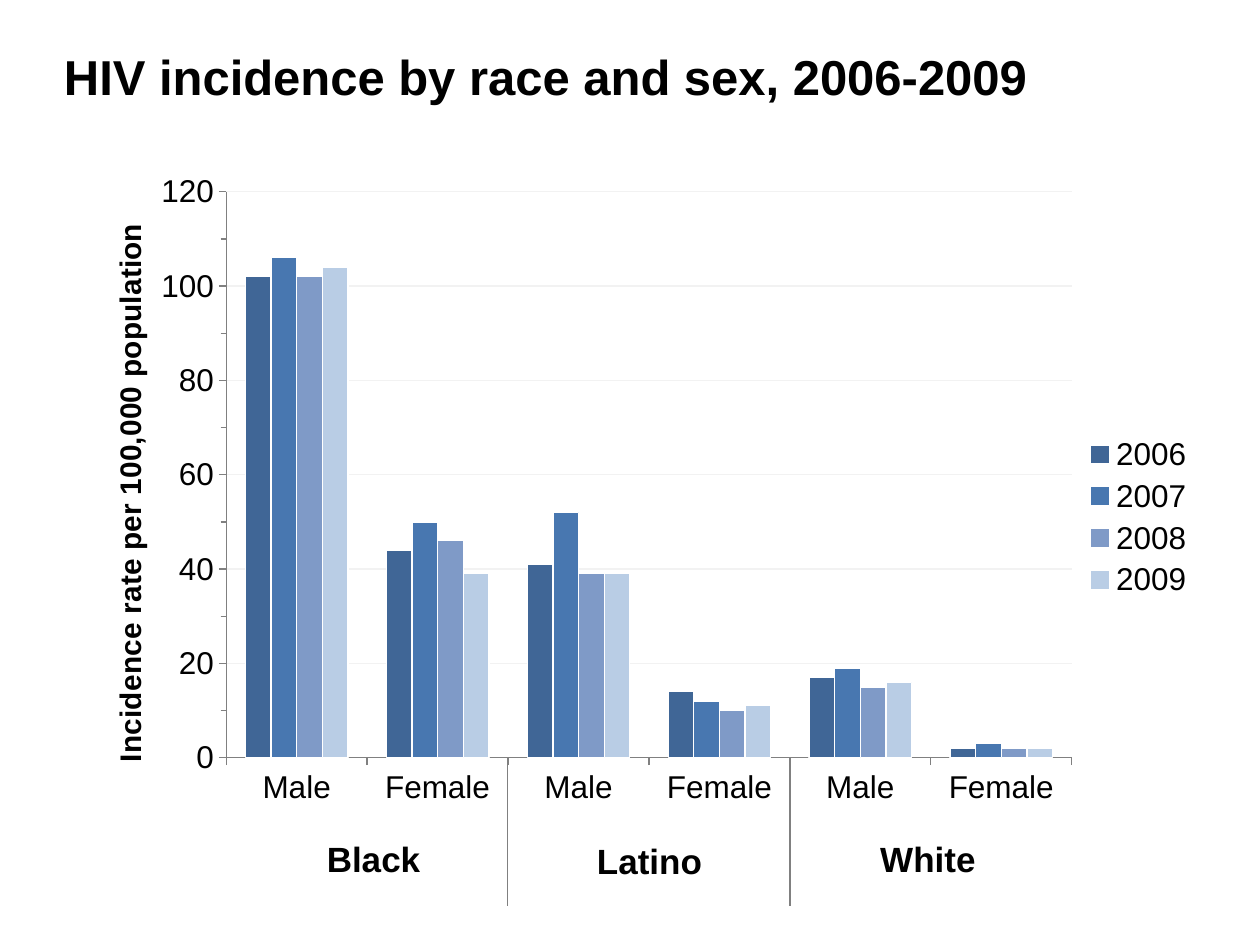
"""Build a slide with a clustered column chart of HIV incidence by race and sex."""
from lxml import etree
from pptx import Presentation
from pptx import util as u
from pptx.chart.data import CategoryChartData
from pptx.dml.color import RGBColor
from pptx.enum import chart as ch, shapes, text
from pptx.oxml.ns import qn

COLORS = {"text": "000000", "axis": "808080", "grid": "F2F2F2", "edge": "FFFFFF"}
FONT = "Arial"
TITLE = "HIV incidence by race and sex, 2006-2009"
AXIS_TITLE = "Incidence rate per 100,000 population"
SEXES = ["Male", "Female"]
RACES = [("Black", 2.05, 6.6), ("Latino", 4.24, 6.61), ("White", 6.45, 6.6)]
DIVIDERS = [4.03, 6.27]
SERIES = [
    ("2006", (102, 44, 41, 14, 17, 2), "406696"),
    ("2007", (106, 50, 52, 12, 19, 3), "4877B0"),
    ("2008", (102, 46, 39, 10, 15, 2), "7F9AC7"),
    ("2009", (104, 39, 39, 11, 16, 2), "B9CDE5"),
]


def rgb(name):
    return RGBColor.from_string(COLORS.get(name, name))


def style(font, size, bold=False):
    values = {"name": FONT, "size": u.Pt(size), "bold": bold}
    for key, value in values.items():
        setattr(font, key, value)
    font.color.rgb = rgb("text")


def set_line(line, color, width=0.75):
    line.color.rgb = rgb(color)
    line.width = u.Pt(width)


def add_text(s, content, box, size, align):
    tf = s.shapes.add_textbox(*map(u.Inches, box)).text_frame
    tf.word_wrap = True
    p = tf.paragraphs[0]
    p.alignment = align
    r = p.add_run()
    r.text = content
    style(r.font, size, True)


def set_layout(parent, index, values):
    for old in parent.findall(qn("c:layout")):
        parent.remove(old)
    layout = etree.Element(qn("c:layout"))
    manual = etree.SubElement(layout, qn("c:manualLayout"))
    for key, value in values.items():
        etree.SubElement(manual, qn(f"c:{key}")).set("val", str(value))
    parent.insert(index, layout)


def add_chart(s):
    data = CategoryChartData()
    data.categories = SEXES * len(RACES)
    for name, values, _ in SERIES:
        data.add_series(name, values)
    box = map(u.Inches, (0.56, 1.28, 9.02, 5.65))
    chart = s.shapes.add_chart(ch.XL_CHART_TYPE.COLUMN_CLUSTERED, *box, data).chart
    style(chart.font, 18)
    chart.has_title = False
    chart.has_legend = True
    chart.legend.position = ch.XL_LEGEND_POSITION.RIGHT
    chart.legend.include_in_layout = False
    style(chart.legend.font, 18)

    plot = chart.plots[0]
    plot.gap_width, plot.overlap, plot.vary_by_categories = 150, 0, False
    for ser, (_, _, color) in zip(plot.series, SERIES):
        ser.format.fill.solid()
        ser.format.fill.fore_color.rgb = rgb(color)
        set_line(ser.format.line, "edge")

    cat, val = chart.category_axis, chart.value_axis
    for axis in (cat, val):
        axis.major_tick_mark = ch.XL_TICK_MARK.OUTSIDE
        set_line(axis.format.line, "axis")
        style(axis.tick_labels.font, 18)
    scale = {"minimum_scale": 0, "maximum_scale": 120, "major_unit": 20, "minor_unit": 10,
             "minor_tick_mark": ch.XL_TICK_MARK.OUTSIDE, "has_major_gridlines": True}
    for key, value in scale.items():
        setattr(val, key, value)
    set_line(val.major_gridlines.format.line, "grid")

    title = val.axis_title
    p = title.text_frame.paragraphs[0]
    r = p.add_run()
    r.text = AXIS_TITLE
    style(r.font, 17, True)
    body = title.text_frame._txBody.find(qn("a:bodyPr"))
    body.set("rot", "-5400000")
    body.set("vert", "horz")
    set_layout(title._element, 1, {"xMode": "edge", "yMode": "edge", "x": 0.03, "y": 0.08})
    set_layout(chart._chartSpace.chart.plotArea, 0, {
        "layoutTarget": "inner", "xMode": "edge", "yMode": "edge",
        "x": 0.137, "y": 0.043, "w": 0.744, "h": 0.795})


def add_divider(s, x):
    ends = map(u.Inches, (x, 6.05, x, 7.19))
    line = s.shapes.add_connector(shapes.MSO_CONNECTOR.STRAIGHT, *ends)
    set_line(line.line, "axis")
    etree.SubElement(line._element.spPr, qn("a:effectLst"))


def main():
    prs = Presentation()
    prs.slide_width, prs.slide_height = u.Inches(10), u.Inches(7.5)
    s = prs.slides.add_slide(prs.slide_layouts[6])
    add_text(s, TITLE, (0.41, 0.32, 9.16, 0.57), 28, text.PP_ALIGN.LEFT)
    add_chart(s)
    for race, x, y in RACES:
        add_text(s, race, (x, y, 1.83, 0.44), 20, text.PP_ALIGN.CENTER)
    for x in DIVIDERS:
        add_divider(s, x)
    prs.save("out.pptx")


if __name__ == "__main__":
    main()
